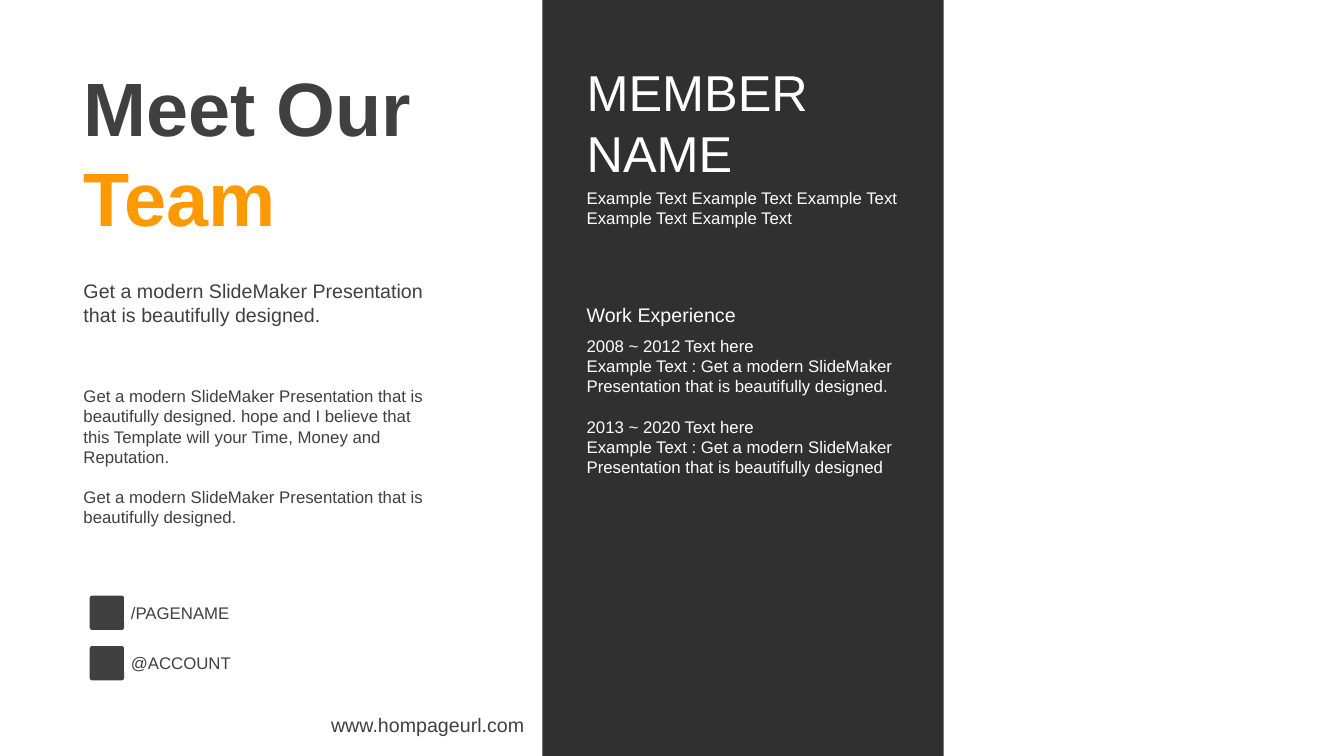
from pptx import Presentation
from pptx.dml.color import RGBColor
from pptx.enum.shapes import MSO_SHAPE
from pptx.enum.text import MSO_ANCHOR, MSO_AUTO_SIZE, PP_ALIGN
from pptx.util import Inches, Pt

TOP, MIDDLE = MSO_ANCHOR.TOP, MSO_ANCHOR.MIDDLE
LEFT, RIGHT = PP_ALIGN.LEFT, PP_ALIGN.RIGHT
RECTANGLE, ROUNDED = MSO_SHAPE.RECTANGLE, MSO_SHAPE.ROUNDED_RECTANGLE
NO_AUTOFIT = MSO_AUTO_SIZE.NONE

WHITE = RGBColor(0xFF, 0xFF, 0xFF)
CHARCOAL = RGBColor(0x30, 0x30, 0x30)
GREY = RGBColor(0x40, 0x40, 0x40)
ORANGE = RGBColor(0xFE, 0x99, 0x00)

# Content: each text is a list of sections, each section a list of paragraphs
TITLE = [("Meet Our ", GREY), ("Team", ORANGE)]
PITCH = "Get a modern SlideMaker Presentation that is beautifully designed."
LEAD = [[PITCH]]
ABOUT = [
    [PITCH + " hope and I believe that this Template will your Time, Money and Reputation."],
    [PITCH],
]
MEMBER = [["MEMBER", "NAME"]]
SUMMARY = [["Example Text Example Text Example Text Example Text Example Text"]]
WORK_HEADING = [["Work Experience"]]
WORK = [
    ["2008 ~ 2012 Text here", "Example Text : " + PITCH],
    ["2013 ~ 2020 Text here", "Example Text : " + PITCH.rstrip(".")],
]
ACCOUNTS = ["/PAGENAME", "@ACCOUNT"]
WEBSITE = [["www.hompageurl.com"]]

# Layout: two text columns, in inches
SLIDE_WIDTH, SLIDE_HEIGHT = 13.33, 7.5
INTRO_LEFT, INTRO_WIDTH = 0.73, 3.73
PANEL_LEFT, PANEL_WIDTH = 5.38, 3.98
MEMBER_LEFT, MEMBER_WIDTH = 5.72, 3.33
ICON_LEFT, ICON_SIZE = 0.89, 0.34
ACCOUNT_LEFT, ACCOUNT_WIDTH, ACCOUNT_HEIGHT = 1.2, 1.34, 0.3
ACCOUNT_CENTER, ACCOUNT_STEP = 6.08, 0.5
LINE_SPACING = 1.2

# left, top, width, height, sections, size, colour, anchor, alignment
TEXTS = [
    (INTRO_LEFT, 2.72, INTRO_WIDTH, 0.57, LEAD, 14, GREY, TOP, LEFT),
    (INTRO_LEFT, 3.78, INTRO_WIDTH, 1.51, ABOUT, 12, GREY, TOP, LEFT),
    (MEMBER_LEFT, 0.56, MEMBER_WIDTH, 1.31, MEMBER, 36, WHITE, TOP, LEFT),
    (MEMBER_LEFT, 1.81, MEMBER_WIDTH, 0.5, SUMMARY, 12, WHITE, MIDDLE, LEFT),
    (MEMBER_LEFT, 2.96, MEMBER_WIDTH, 0.34, WORK_HEADING, 14, WHITE, TOP, LEFT),
    (MEMBER_LEFT, 3.28, MEMBER_WIDTH, 1.51, WORK, 12, WHITE, TOP, LEFT),
    (2.97, 7.02, 2.33, 0.34, WEBSITE, 14, GREY, MIDDLE, RIGHT),
]


def format_run(run, size, color, bold=False):
    run.font.name = "Arial"
    run.font.size = Pt(size)
    run.font.bold = bold
    run.font.color.rgb = color


def add_block(slide, kind, left, top, width, height, color):
    block = slide.shapes.add_shape(
        kind, Inches(left), Inches(top), Inches(width), Inches(height))
    block.shadow.inherit = False
    block.fill.solid()
    block.fill.fore_color.rgb = color
    block.line.fill.background()
    return block


def add_text(slide, left, top, width, height, sections, size, color, anchor, alignment):
    box = slide.shapes.add_textbox(
        Inches(left), Inches(top), Inches(width), Inches(height))
    frame = box.text_frame
    frame.word_wrap = True
    frame.vertical_anchor = anchor
    frame.text = "\n".join(line for section in sections for line in section)
    for paragraph in frame.paragraphs:
        paragraph.alignment = alignment
        paragraph.line_spacing = Pt(size * LINE_SPACING)
        format_run(paragraph.runs[0], size, color)
    # Leave one line of space before every section after the first
    start = 0
    for section in sections[:-1]:
        start += len(section)
        frame.paragraphs[start].space_before = Pt(size * LINE_SPACING)


def add_title(slide):
    title = slide.shapes.title
    title.left, title.top = Inches(INTRO_LEFT), Inches(0.55)
    title.width, title.height = Inches(4.12), Inches(1.92)
    frame = title.text_frame
    frame.auto_size = NO_AUTOFIT
    frame.word_wrap = True
    frame.vertical_anchor = TOP
    paragraph = frame.paragraphs[0]
    paragraph.alignment = LEFT
    paragraph.line_spacing = Pt(54 * LINE_SPACING)
    for words, color in TITLE:
        run = paragraph.add_run()
        run.text = words
        format_run(run, 54, color, bold=True)


def main():
    presentation = Presentation()
    presentation.slide_width = Inches(SLIDE_WIDTH)
    presentation.slide_height = Inches(SLIDE_HEIGHT)
    slide = presentation.slides.add_slide(
        presentation.slide_layouts.get_by_name("Title Only"))

    # Member panel, title and texts
    add_block(slide, RECTANGLE, PANEL_LEFT, 0, PANEL_WIDTH, SLIDE_HEIGHT, CHARCOAL)
    add_title(slide)
    for text in TEXTS:
        add_text(slide, *text)

    # Accounts, each beside a plain marker
    for row, account in enumerate(ACCOUNTS):
        center = ACCOUNT_CENTER + row * ACCOUNT_STEP
        marker = add_block(slide, ROUNDED, ICON_LEFT, center - ICON_SIZE / 2,
                           ICON_SIZE, ICON_SIZE, GREY)
        marker.adjustments[0] = 0.07
        add_text(slide, ACCOUNT_LEFT, center - ACCOUNT_HEIGHT / 2, ACCOUNT_WIDTH,
                 ACCOUNT_HEIGHT, [[account]], 12, GREY, MIDDLE, LEFT)

    presentation.save("out.pptx")


if __name__ == "__main__":
    main()
